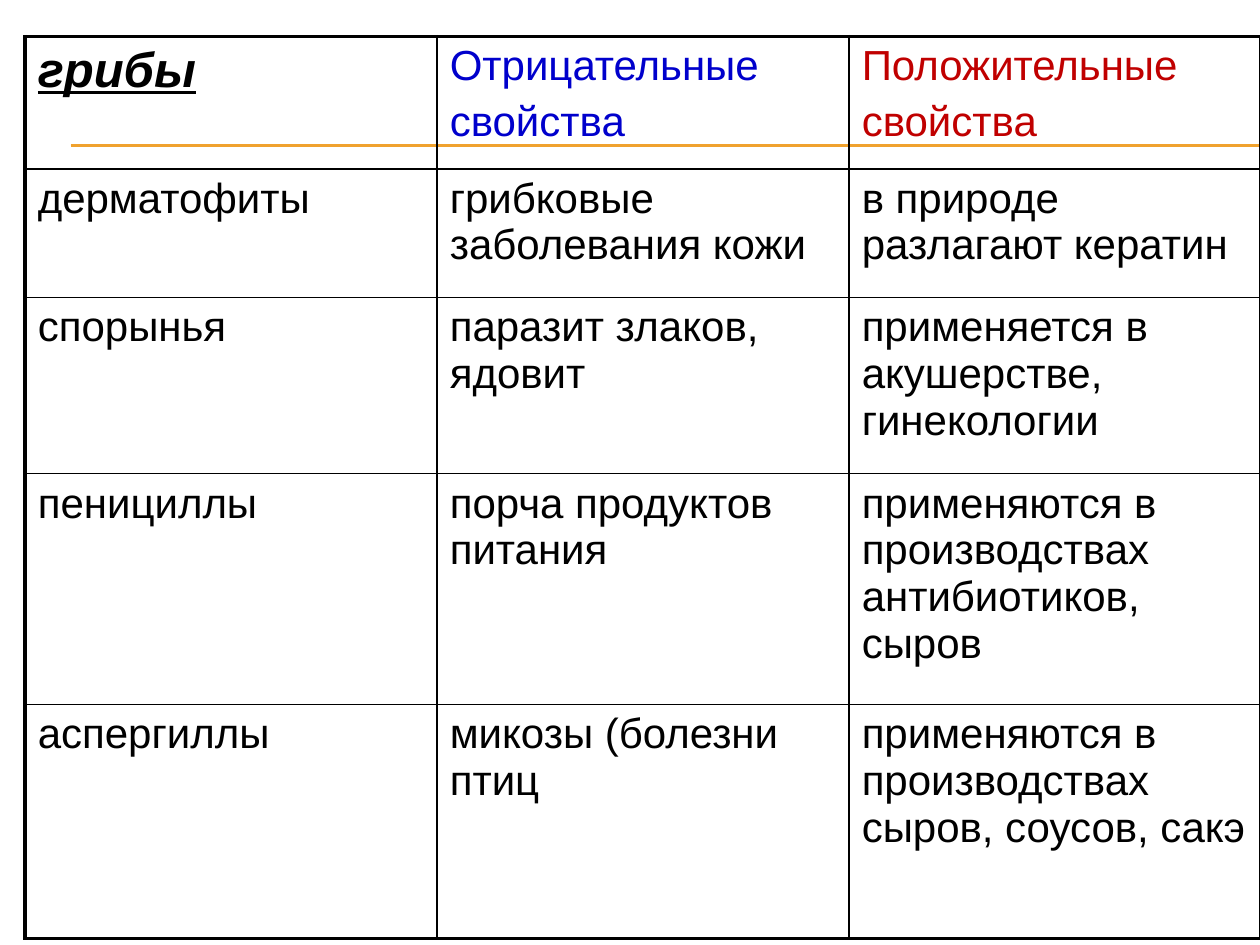
"""Build a slide with a table of harmful and useful properties of fungi."""
from dataclasses import dataclass

from lxml.etree import SubElement
from pptx import Presentation
from pptx.dml.color import RGBColor
from pptx.enum.shapes import MSO_CONNECTOR
from pptx.oxml import parse_xml
from pptx.oxml.ns import nsdecls, qn
from pptx.util import Inches, Pt

BLACK = "000000"
BLUE = "0000CC"
RED = "C00000"
ORANGE = "F0A22E"
THIN, THICK = 1, 2.25
COLUMN_WIDTH = 3.27
ROW_HEIGHTS = (1.05, 1.02, 1.4, 1.83, 1.86)
RULE_HEIGHTS = (1.15, 1.16)


@dataclass(frozen=True)
class Entry:
    text: str
    color: str = BLACK
    size: int = 24
    emphasis: bool = False


ROWS = (
    (Entry("грибы", size=28, emphasis=True),
     Entry("Отрицательные\nсвойства", BLUE),
     Entry("Положительные\nсвойства", RED)),
    (Entry("дерматофиты"),
     Entry("грибковые заболевания кожи"),
     Entry("в природе разлагают кератин")),
    (Entry("спорынья"),
     Entry("паразит злаков, ядовит"),
     Entry("применяется в акушерстве, гинекологии")),
    (Entry("пенициллы"),
     Entry("порча продуктов питания"),
     Entry("применяются в производствах антибиотиков, сыров")),
    (Entry("аспергиллы"),
     Entry("микозы (болезни птиц"),
     Entry("применяются в производствах сыров, соусов, сакэ")),
)


def rgb(color: str) -> RGBColor:
    return RGBColor.from_string(color)


def add_rule(slide, height: float) -> None:
    rule = slide.shapes.add_connector(
        MSO_CONNECTOR.STRAIGHT, Inches(0.56), Inches(height), Inches(10), Inches(height))
    rule.line.color.rgb = rgb(ORANGE)
    rule.line.width = Pt(0.75)
    SubElement(rule._element.spPr, qn("a:effectLst"))


def set_borders(cell, widths: dict[str, float]) -> None:
    properties = cell._tc.get_or_add_tcPr()
    for position, (side, width) in enumerate(widths.items()):
        border = parse_xml(
            f'<a:ln{side} {nsdecls("a")} w="{Pt(width)}"><a:solidFill>'
            f'<a:srgbClr val="{BLACK}"/></a:solidFill></a:ln{side}>')
        properties.insert(position, border)


def write_entry(cell, entry: Entry) -> None:
    cell.fill.background()
    cell.text_frame.text = entry.text
    for number, para in enumerate(cell.text_frame.paragraphs):
        if number:
            para.space_before = Pt(0.2 * entry.size)
        for span in para.runs:
            span.font.name = "Arial"
            span.font.size = Pt(entry.size)
            span.font.color.rgb = rgb(entry.color)
            span.font.bold = span.font.italic = span.font.underline = entry.emphasis


def add_fungi_table(slide) -> None:
    last_row, last_column = len(ROWS) - 1, len(ROWS[0]) - 1
    table = slide.shapes.add_table(
        len(ROWS), len(ROWS[0]), Inches(0.2), Inches(0.29),
        Inches(COLUMN_WIDTH * len(ROWS[0])), Inches(sum(ROW_HEIGHTS))).table
    table.first_row = table.horz_banding = False
    for column in table.columns:
        column.width = Inches(COLUMN_WIDTH)
    for row_index, (entries, height) in enumerate(zip(ROWS, ROW_HEIGHTS)):
        table.rows[row_index].height = Inches(height)
        for column_index, entry in enumerate(entries):
            cell = table.cell(row_index, column_index)
            write_entry(cell, entry)
            set_borders(cell, {
                "L": THICK if column_index == 0 else THIN,
                "R": THICK if column_index == last_column else THIN,
                "T": THICK if row_index == 0 else THIN,
                "B": THICK if row_index == last_row else THIN,
            })


def main() -> None:
    deck = Presentation()
    deck.slide_width, deck.slide_height = Inches(10), Inches(7.5)
    page = deck.slides.add_slide(deck.slide_layouts[6])
    for height in RULE_HEIGHTS:
        add_rule(page, height)
    add_fungi_table(page)
    deck.save("out.pptx")


if __name__ == "__main__":
    main()
